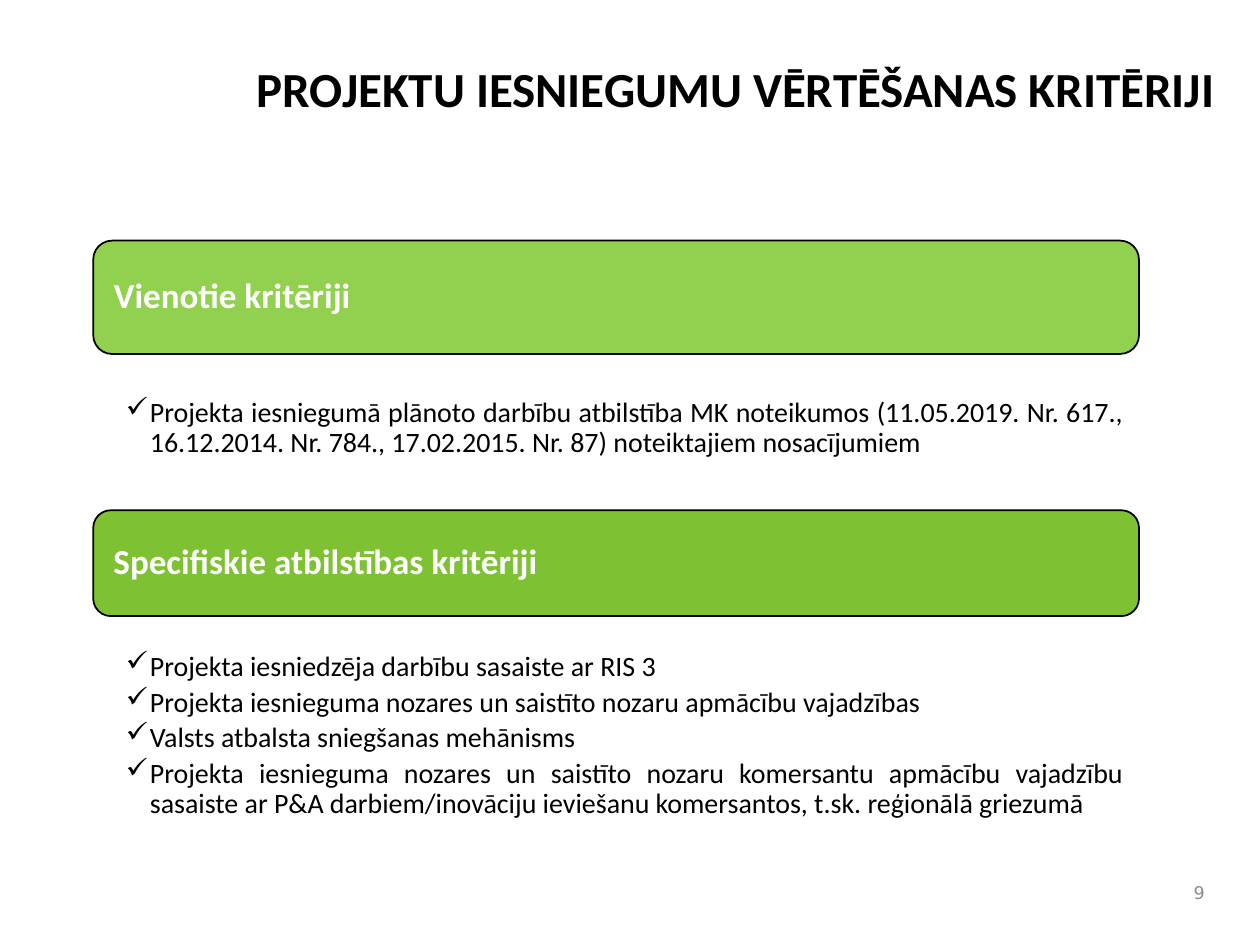
from lxml import etree
from pptx import Presentation
from pptx.dml.color import RGBColor
from pptx.enum.shapes import MSO_SHAPE
from pptx.enum.text import MSO_ANCHOR, PP_ALIGN
from pptx.oxml.ns import qn
from pptx.util import Inches, Pt

ROUNDED = MSO_SHAPE.ROUNDED_RECTANGLE
TOP, MIDDLE = MSO_ANCHOR.TOP, MSO_ANCHOR.MIDDLE
LEFT, CENTER, RIGHT = PP_ALIGN.LEFT, PP_ALIGN.CENTER, PP_ALIGN.RIGHT
JUSTIFY = PP_ALIGN.JUSTIFY

COLORS = {
    "text": "000000",
    "on_banner": "FFFFFF",
    "outline": "000000",
    "common": "92D050",
    "specific": "7EC234",
    "page_number": "8C8C8C",
}

# The page is a grid of 100 columns by 75 rows.
COLUMNS, ROWS = 100, 75
CELL = Inches(0.1)
BODY_LEFT, BODY_WIDTH = 7.4, 83

# Each section: heading, colour, banner row and height, list row and height, items.
SECTIONS = [
    ("Vienotie kritēriji", "common", 19.1, 9, 31.4, 8.9, [
        "Projekta iesniegumā plānoto darbību atbilstība MK noteikumos "
        "(11.05.2019. Nr. 617., 16.12.2014. Nr. 784., 17.02.2015. Nr. 87) "
        "noteiktajiem nosacījumiem",
    ]),
    ("Specifiskie atbilstības kritēriji", "specific", 40.5, 8.4, 51.6, 14.4, [
        "Projekta iesniedzēja darbību sasaiste ar RIS 3",
        "Projekta iesnieguma nozares un saistīto nozaru apmācību vajadzības",
        "Valsts atbalsta sniegšanas mehānisms",
        "Projekta iesnieguma nozares un saistīto nozaru komersantu apmācību "
        "vajadzību sasaiste ar P&A darbiem/inovāciju ieviešanu komersantos, "
        "t.sk. reģionālā griezumā",
    ]),
]


def color(name):
    return RGBColor.from_string(COLORS[name])


def grid(*cells):
    return [round(cell * CELL) for cell in cells]


def set_insets(frame, left, top, right, bottom):
    frame.margin_left, frame.margin_top = Inches(left), Inches(top)
    frame.margin_right, frame.margin_bottom = Inches(right), Inches(bottom)


def add_bullet(para, mark, indent):
    properties = para._p.get_or_add_pPr()
    properties.set("marL", str(Inches(indent)))
    properties.set("indent", str(-Inches(indent)))
    etree.SubElement(properties, qn("a:buChar")).set("char", mark)


def write(frame, lines, size, ink="text", font="Calibri", bold=False,
          align=LEFT, anchor=TOP, wrap=True, spacing=0.9, after=0, bullet=None):
    """Fill a text frame with one paragraph for each line."""
    frame.word_wrap = wrap
    frame.vertical_anchor = anchor
    for index, line in enumerate(lines):
        para = frame.paragraphs[0] if index == 0 else frame.add_paragraph()
        para.alignment = align
        para.line_spacing = spacing
        para.space_after = Pt(after)
        if bullet:
            para.level = 1
            add_bullet(para, bullet, 0.19)
        span = para.add_run()
        span.text = line
        span.font.name = font
        span.font.size = Pt(size)
        span.font.bold = bold
        span.font.color.rgb = color(ink)


def add_text(page, cells, lines, insets=(0.1, 0.05, 0.1, 0.05), **style):
    box = page.shapes.add_textbox(*grid(*cells))
    set_insets(box.text_frame, *insets)
    write(box.text_frame, lines, **style)


def add_banner(page, cells, heading, fill):
    banner = page.shapes.add_shape(ROUNDED, *grid(*cells))
    banner.shadow.inherit = False
    banner.fill.solid()
    banner.fill.fore_color.rgb = color(fill)
    banner.line.color.rgb = color("outline")
    banner.line.width = Pt(1)
    set_insets(banner.text_frame, 0.12, 0.08, 0.12, 0.08)
    write(banner.text_frame, [heading], size=20, ink="on_banner", bold=True,
          anchor=MIDDLE)


def main():
    deck = Presentation()
    deck.slide_width, deck.slide_height = grid(COLUMNS, ROWS)
    page = deck.slides.add_slide(deck.slide_layouts[6])

    for heading, fill, banner_row, banner_rows, list_row, list_rows, items in SECTIONS:
        add_banner(page, (BODY_LEFT, banner_row, BODY_WIDTH, banner_rows),
                   heading, fill)
        add_text(page, (BODY_LEFT, list_row, BODY_WIDTH, list_rows), items,
                 insets=(0.26, 0.02, 0.12, 0.02), size=16, align=JUSTIFY,
                 after=3, bullet="✓")

    add_text(page, (18.9, 4.7, 78.9, 5.3),
             ["PROJEKTU IESNIEGUMU VĒRTĒŠANAS KRITĒRIJI"],
             size=28, bold=True, align=CENTER, wrap=False)
    add_text(page, (93.3, 69.2, 3.3, 3.3), ["9"], size=10, font="DejaVu Sans",
             ink="page_number", align=RIGHT, anchor=MIDDLE, spacing=1.0)

    deck.save("out.pptx")


if __name__ == "__main__":
    main()
